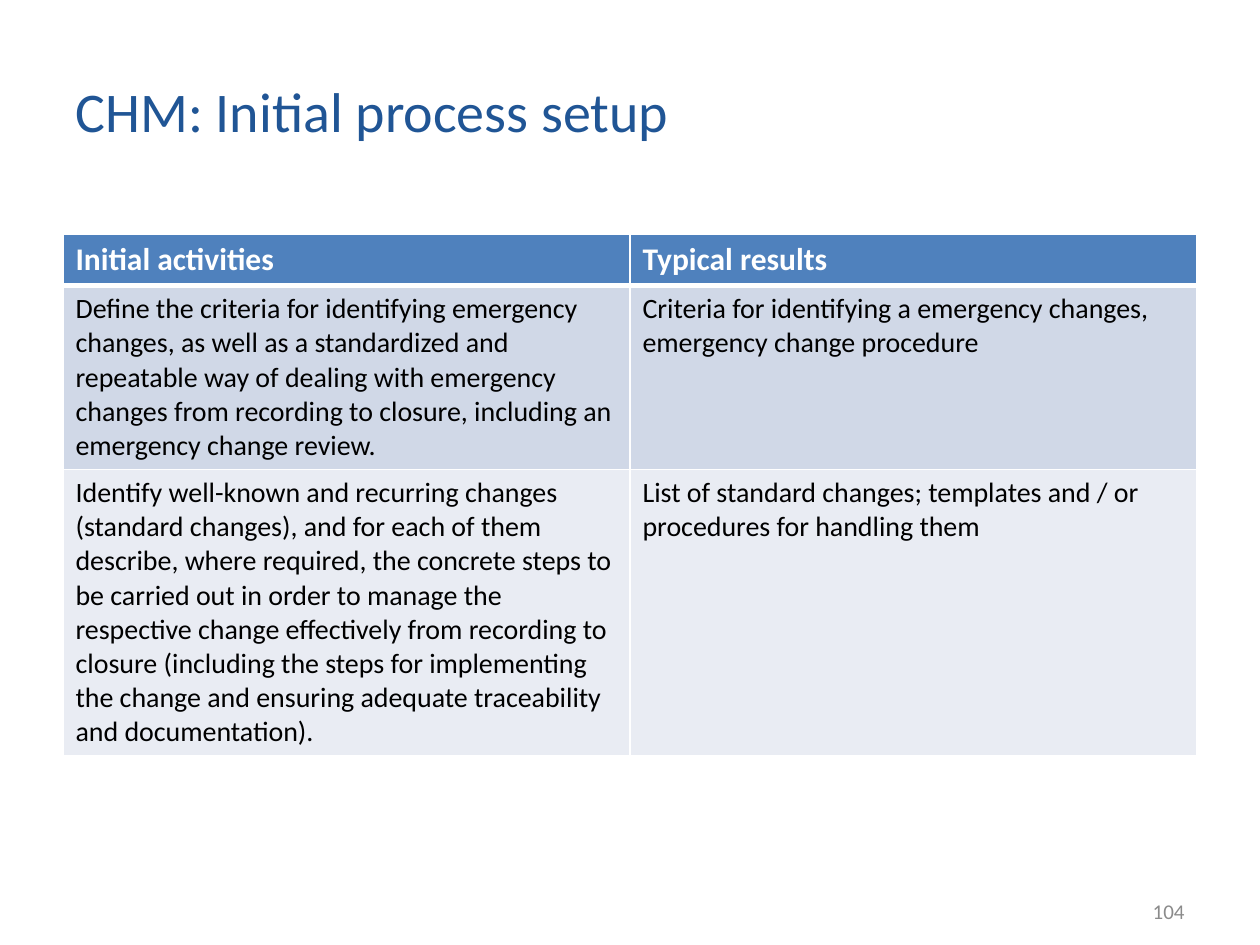
from dataclasses import dataclass

from lxml import etree
from pptx import Presentation
from pptx.dml.color import RGBColor
from pptx.enum import text
from pptx.oxml import ns
from pptx.util import Pt


@dataclass(frozen=True)
class Theme:
    font: str = "Calibri"
    title_color: str = "205595"
    header_fill: str = "4F81BD"
    band_fills: tuple = ("D0D8E7", "E9ECF3")
    light: str = "FFFFFF"
    dark: str = "000000"
    muted: str = "8B8B8B"
    title_size: float = 32
    header_size: float = 18
    body_size: float = 16
    number_size: float = 12
    border: float = 0.96
    header_border: float = 3


class SlideBuilder:
    def __init__(self, slide, theme):
        self.slide = slide
        self.theme = theme

    def style(self, paragraph, size, color, bold=False):
        font = paragraph.font
        font.name = self.theme.font
        font.size = Pt(size)
        font.bold = bold
        font.color.rgb = RGBColor.from_string(color)

    def title(self, wording, left, top, width, height):
        shape = self.slide.shapes.title
        shape.left, shape.top, shape.width, shape.height = map(Pt, (left, top, width, height))
        frame = shape.text_frame
        frame.text = wording
        frame.vertical_anchor = text.MSO_ANCHOR.MIDDLE
        paragraph = frame.paragraphs[0]
        paragraph.alignment = text.PP_ALIGN.LEFT
        self.style(paragraph, self.theme.title_size, self.theme.title_color)

    def cell_borders(self, cell, top, bottom):
        properties = cell._tc.get_or_add_tcPr()
        side = self.theme.border
        for tag, width in (("lnL", side), ("lnR", side), ("lnT", top), ("lnB", bottom)):
            line = etree.SubElement(properties, ns.qn(f"a:{tag}"), w=str(Pt(width)))
            fill = etree.SubElement(line, ns.qn("a:solidFill"))
            etree.SubElement(fill, ns.qn("a:srgbClr"), val=self.theme.light)

    def table(self, rows, left, top, column_width, row_heights):
        theme = self.theme
        columns = len(rows[0])
        table = self.slide.shapes.add_table(
            len(rows), columns, Pt(left), Pt(top),
            Pt(column_width * columns), Pt(sum(row_heights)),
        ).table
        for column in table.columns:
            column.width = Pt(column_width)
        for index, (row, height) in enumerate(zip(rows, row_heights)):
            table.rows[index].height = Pt(height)
            header = index == 0
            fill = theme.header_fill if header else theme.band_fills[(index - 1) % 2]
            size = theme.header_size if header else theme.body_size
            color = theme.light if header else theme.dark
            above = theme.header_border if index == 1 else theme.border
            below = theme.header_border if header else theme.border
            for position, wording in enumerate(row):
                cell = table.cell(index, position)
                cell.text = wording
                self.cell_borders(cell, above, below)
                cell.fill.solid()
                cell.fill.fore_color.rgb = RGBColor.from_string(fill)
                self.style(cell.text_frame.paragraphs[0], size, color, header)

    def page_number(self, wording, left, top, width, height):
        shape = self.slide.shapes.add_textbox(*map(Pt, (left, top, width, height)))
        frame = shape.text_frame
        frame.word_wrap = True
        frame.vertical_anchor = text.MSO_ANCHOR.MIDDLE
        frame.text = wording
        paragraph = frame.paragraphs[0]
        paragraph.alignment = text.PP_ALIGN.RIGHT
        self.style(paragraph, self.theme.number_size, self.theme.muted)


ACTIVITIES = (
    ("Initial activities", "Typical results"),
    (
        "Define the criteria for identifying emergency changes, as well as a standardized "
        "and repeatable way of dealing with emergency changes from recording to closure, "
        "including an emergency change review.",
        "Criteria for identifying a emergency changes, emergency change procedure",
    ),
    (
        "Identify well-known and recurring changes (standard changes), and for each of them "
        "describe, where required, the concrete steps to be carried out in order to manage "
        "the respective change effectively from recording to closure (including the steps "
        "for implementing the change and ensuring adequate traceability and documentation).",
        "List of standard changes; templates and / or procedures for handling them",
    ),
)


def main():
    presentation = Presentation()
    presentation.slide_width = Pt(720)
    presentation.slide_height = Pt(540)
    slide = presentation.slides.add_slide(presentation.slide_layouts[5])
    builder = SlideBuilder(slide, Theme())
    builder.title("CHM: Initial process setup", 36, 21.6, 579, 82.8)
    builder.table(ACTIVITIES, 36, 134, 324, (25.2, 86.4, 133.9))
    builder.page_number("104", 516, 506.2, 168, 28.8)
    presentation.save("out.pptx")


if __name__ == "__main__":
    main()
